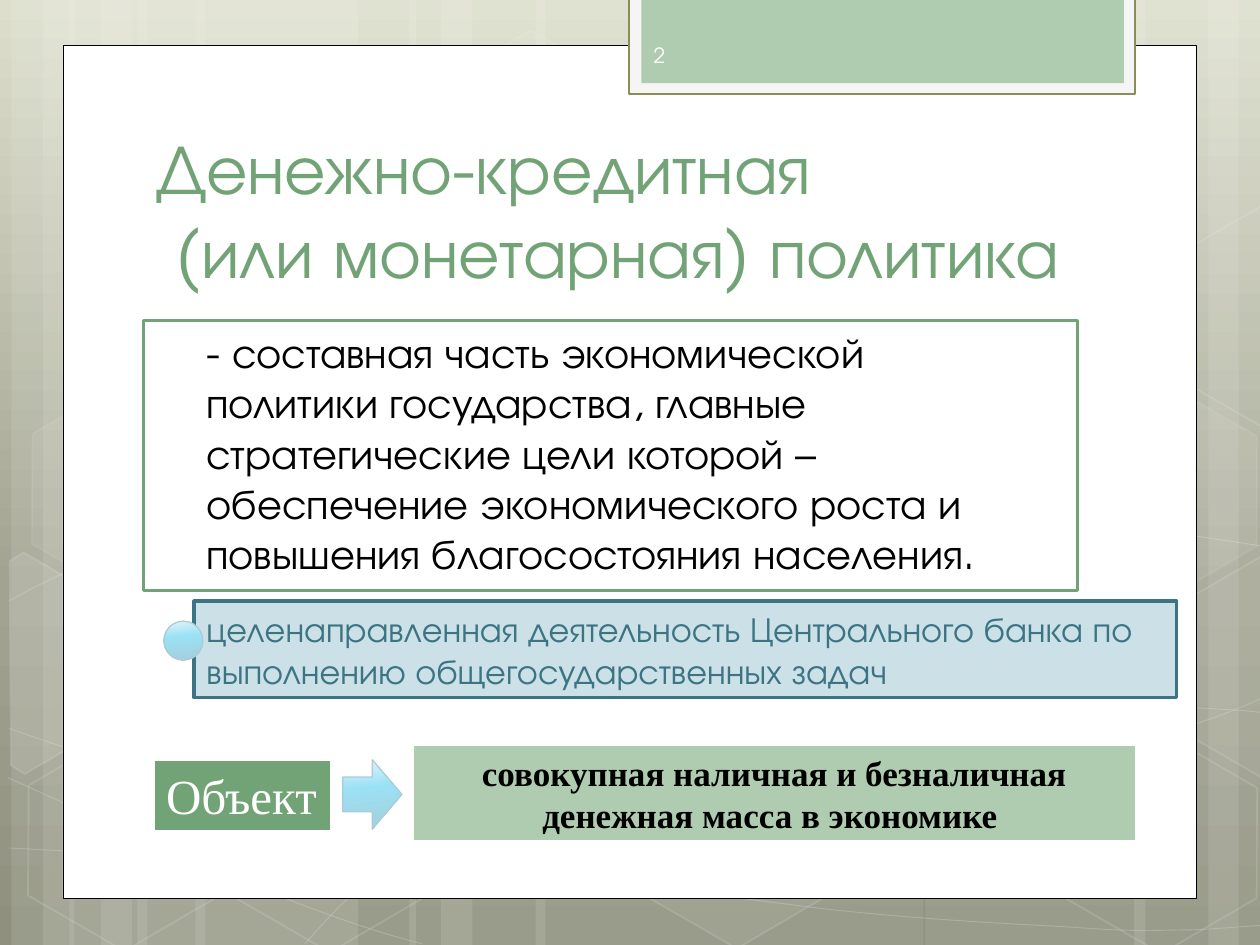
import math
from copy import deepcopy

from pptx import Presentation
from pptx import util as u
from pptx.dml.color import RGBColor
from pptx.enum import shapes, text
from pptx.oxml import ns, xmlchemy

WHITE, BLACK = RGBColor(0xFF, 0xFF, 0xFF), RGBColor(0x00, 0x00, 0x00)
NUMBER, PAPER = RGBColor(0xFE, 0xFE, 0xFE), RGBColor(0xF5, 0xF5, 0xF5)
OLIVE, SAGE = RGBColor(0x8A, 0x8E, 0x56), RGBColor(0xB0, 0xCC, 0xB0)
GREEN, TEAL = RGBColor(0x72, 0xA3, 0x76), RGBColor(0x3C, 0x74, 0x83)
PALE_BLUE, EDGE_BLUE = RGBColor(0xCB, 0xE1, 0xE7), RGBColor(0xA8, 0xCD, 0xD7)
GLOSS = [(0, RGBColor(0xE6, 0xF4, 0xF8)), (0.4, RGBColor(0x9B, 0xE1, 0xF6)), (1, RGBColor(0xA6, 0xCE, 0xD9))]
BACKDROP = [(0, RGBColor(0xDD, 0xDF, 0xCC)), (0.62, RGBColor(0xA2, 0xA3, 0x91)), (1, RGBColor(0x8F, 0x91, 0x7E))]
SANS, SERIF = "TeX Gyre Adventor", "Times New Roman"
KIND, ANCHOR, ALIGN = shapes.MSO_SHAPE, text.MSO_ANCHOR, text.PP_ALIGN

STRIPES = [(1.09, 1.75, 0), (0.09, 0.5, 0), (0.34, 0.83, 0), (1.55, 1.75, 0), (0.55, 0.5, 0), (0.8, 0.83, 0),
           (7.34, 1.75, 180), (9.59, 0.5, 180), (9, 0.83, 180), (4.25, 3.08, 0), (3.25, 0.5, 0), (3.5, 0.83, 0)]
HEXAGONS = [(3.34, 0.36, 4, 8), (4.97, 5.89, 6, 12), (0.11, 5.91, 0, 12), (0.14, 3.12, 7, 8),
            (1.74, 5.92, 0, 12), (7.53, 4.53, 10, 12), (8.34, 5.93, 0, 12), (8.34, 3.14, 7, 8)]
CUT_HEXAGONS = [
    ((0.36, 5.36), 10, [(0.08, 4.45), (0.19, 4.38), (0.96, 4.83), (0.95, 5.7), (0.2, 6.14), (0.09, 6.07)]),
    ((9.85, 5.2), 4, [(9.26, 4.85), (10.02, 4.41), (10.09, 4.46), (10.09, 6.13), (10.02, 6.17), (9.26, 5.73)]),
    ((9.85, 2.41), 0, [(9.26, 2.07), (10.02, 1.63), (10.1, 1.68), (10.09, 3.35), (10.02, 3.39), (9.26, 2.95)])]
WAVES = [
    [(0.07, 6.73), (0.61, 6.76), (1.15, 6.79), (1.9, 6.78), (2.65, 6.77), (3.58, 6.75), (4.58, 6.65),
     (5.58, 6.55), (7, 6.36), (7.92, 6.17), (8.83, 5.98), (9.77, 5.68), (10.07, 5.51)],
    [(0.07, 4.77), (0.36, 4.61), (0.65, 4.46), (1.21, 4.31), (1.78, 4.16), (2.59, 3.94), (3.47, 3.87),
     (4.36, 3.8), (5.44, 3.79), (6.54, 3.87), (7.64, 3.95), (9.47, 4.26), (10.07, 4.34)],
    [(0.06, 6.17), (1.27, 6.72), (2.47, 7.27), (3.35, 7.49)],
    [(0.07, 5.78), (0.38, 5.89), (0.7, 6), (1.28, 6.16), (1.86, 6.31), (2.73, 6.56), (3.57, 6.73),
     (4.4, 6.9), (5.45, 7.08), (6.28, 7.18), (7.11, 7.29), (8, 7.33), (8.53, 7.36), (9.06, 7.4),
     (9.19, 7.38), (9.45, 7.38), (9.71, 7.37), (9.89, 7.35), (10.07, 7.34)],
    [(2.42, 7.49), (2.6, 7.29), (2.78, 7.09), (3.02, 6.91), (3.26, 6.72), (3.6, 6.53), (3.88, 6.39),
     (4.16, 6.25), (4.33, 6.19), (4.69, 6.09), (5.06, 5.99), (5.73, 5.85), (6.08, 5.78), (6.44, 5.71),
     (6.49, 5.71), (6.8, 5.69), (7.11, 5.66), (7.6, 5.63), (7.94, 5.62), (8.29, 5.61), (8.86, 5.62),
     (8.86, 5.62), (9.08, 5.62), (9.31, 5.62), (9.53, 5.62), (9.71, 5.63), (9.88, 5.64), (9.97, 5.65),
     (10.06, 5.66), (10.03, 5.65), (10.06, 5.66)]]


def set_alpha(color_parent, percent):
    """Make the solid colour inside an element partly transparent."""
    alpha = xmlchemy.OxmlElement("a:alpha")
    alpha.set("val", str(percent * 1000))
    next(color_parent.iter(ns.qn("a:srgbClr"))).append(alpha)


def set_gradient(fill, element, stops, angle):
    """Give a fill three gradient stops, with the angle counted clockwise."""
    fill.gradient()
    fill.gradient_angle = 360 - angle
    stop_list = next(element.iter(ns.qn("a:gsLst")))
    stop_list.append(deepcopy(stop_list[0]))
    for stop, (position, color) in zip(fill.gradient_stops, stops):
        stop.position = position
        stop.color.rgb = color


def style(shape, fill=None, line=None, width=1, fill_alpha=100, line_alpha=100):
    """Set fill, outline and transparency of a shape and drop its shadow."""
    shape.shadow.inherit = False
    if fill is None or fill_alpha == 0:
        shape.fill.background()
    elif isinstance(fill, list):
        set_gradient(shape.fill, shape.element, fill, 84)
    else:
        shape.fill.solid()
        shape.fill.fore_color.rgb = fill
        if fill_alpha < 100:
            set_alpha(shape.element.spPr.find(ns.qn("a:solidFill")), fill_alpha)
    if line is None:
        shape.line.fill.background()
    else:
        shape.line.color.rgb = line
        shape.line.width = u.Pt(width)
        if line_alpha < 100:
            set_alpha(shape.element.spPr.find(ns.qn("a:ln")), line_alpha)


def add_preset(slide, kind, box, **look):
    """Add a styled preset shape in a box given in inches."""
    shape = slide.shapes.add_shape(kind, *map(u.Inches, box))
    style(shape, **look)
    return shape


def add_outline(slide, points, close, **look):
    """Add a styled freeform through points given in inches."""
    corners = [(u.Inches(x), u.Inches(y)) for x, y in points]
    builder = slide.shapes.build_freeform(*corners[0])
    builder.add_line_segments(corners[1:], close=close)
    shape = builder.convert_to_shape()
    style(shape, **look)
    return shape


def bend(shape):
    """Turn every three straight segments of a freeform into one cubic curve."""
    segments = list(shape.element.iter(ns.qn("a:lnTo")))
    for start in range(0, len(segments), 3):
        curve = xmlchemy.OxmlElement("a:cubicBezTo")
        segments[start].addprevious(curve)
        for segment in segments[start:start + 3]:
            curve.append(segment[0])
            segment.getparent().remove(segment)


def turn_back(point, center, degrees):
    """Rotate a point counter-clockwise around a center."""
    dx, dy = point[0] - center[0], point[1] - center[1]
    cos, sin = math.cos(math.radians(degrees)), math.sin(math.radians(degrees))
    return center[0] + dx * cos + dy * sin, center[1] - dx * sin + dy * cos


def write(shape, paragraphs, size, color, font=SANS, bold=False, anchor=ANCHOR.TOP,
          align=ALIGN.LEFT, wrap=True, indent=0, fit=text.MSO_AUTO_SIZE.NONE):
    """Write paragraphs, each a list of lines, into a shape."""
    frame = shape.text_frame
    frame.word_wrap, frame.vertical_anchor, frame.auto_size = wrap, anchor, fit
    for index, lines in enumerate(paragraphs):
        paragraph = frame.add_paragraph() if index else frame.paragraphs[0]
        paragraph.alignment = align
        if indent:
            paragraph._p.get_or_add_pPr().set("marL", str(u.Inches(indent)))
        for number, line in enumerate(lines):
            if number:
                paragraph.add_line_break()
            run = paragraph.add_run()
            run.text = line
            run.font.size, run.font.name, run.font.bold = u.Pt(size), font, bold
            run.font.color.rgb = color


def draw_backdrop(slide, box):
    """Draw the gradient, stripes, waves, hexagons and white sheet."""
    left, top, width, height = box
    set_gradient(slide.background.fill, slide.element, BACKDROP, 90)
    for x, stripe_width, turn in STRIPES:
        stripe = add_preset(slide, KIND.RECTANGLE, (left + x, top, stripe_width, height), fill=WHITE, fill_alpha=10)
        stripe.rotation = turn
    for wave in WAVES:
        points = [(left + x, top + y) for x, y in wave]
        bend(add_outline(slide, points, False, line=WHITE, width=0.5, line_alpha=20))
    for x, y, fill_alpha, line_alpha in HEXAGONS:
        hexagon = add_preset(slide, KIND.HEXAGON, (left + x, top + y, 1.75, 1.52), fill=WHITE,
                             fill_alpha=fill_alpha, line=WHITE, line_alpha=line_alpha)
        hexagon.adjustments[0] = 0.285
        hexagon.rotation = 30
    for center, alpha, corners in CUT_HEXAGONS:
        points = [turn_back(corner, center, 30) for corner in corners]
        cut = add_outline(slide, [(left + x, top + y) for x, y in points], True, fill=WHITE,
                          fill_alpha=alpha, line=WHITE, line_alpha=12)
        cut.rotation = 30
    add_preset(slide, KIND.RECTANGLE, (left + 0.5, top + 0.36, width - 1, height - 0.73),
               fill=WHITE, line=BLACK, width=0.5)


def draw_number_tab(slide, box):
    """Draw the hanging tab with the slide number."""
    left, top, width, height = box
    add_preset(slide, KIND.RECTANGLE, box, fill=PAPER, line=OLIVE, width=1.25)
    add_preset(slide, KIND.RECTANGLE, (left + 0.1, top, width - 0.19, height - 0.09), fill=SAGE)
    number = slide.shapes.add_textbox(*map(u.Inches, (left + 0.1, top + 0.26, 1.46, 0.4)))
    write(number, [["2"]], 12, NUMBER, anchor=ANCHOR.MIDDLE)


def draw_heading(slide, box):
    """Write the two-line heading."""
    heading = slide.shapes.add_textbox(*map(u.Inches, box))
    write(heading, [["Денежно-кредитная", " (или монетарная) политика"]], 40, GREEN, anchor=ANCHOR.BOTTOM)


def draw_definition(slide, box):
    """Draw the framed definition."""
    definition = slide.shapes.add_textbox(*map(u.Inches, box))
    style(definition, fill=WHITE, line=GREEN, width=1.75)
    write(definition, [["- составная часть экономической"], ["политики государства, главные"],
                       ["стратегические цели которой –"], ["обеспечение экономического роста и"],
                       ["повышения благосостояния населения."]], 24, BLACK, indent=0.4)


def draw_object_row(slide, box):
    """Draw the object label, its arrow and the money supply panel."""
    left, top, width, height = box
    grow = text.MSO_AUTO_SIZE.SHAPE_TO_FIT_TEXT
    supply = add_preset(slide, KIND.RECTANGLE, (left + 2.05, top, width - 2.05, height), fill=SAGE, line=WHITE, width=1.75)
    write(supply, [["совокупная наличная и безналичная денежная масса в экономике "]], 20, BLACK,
          SERIF, bold=True, anchor=ANCHOR.MIDDLE, align=ALIGN.CENTER, fit=grow)
    label = add_preset(slide, KIND.RECTANGLE, (left, top + 0.12, 1.41, 0.57), fill=GREEN, line=WHITE, width=1.75)
    write(label, [["Объект"]], 28, WHITE, SERIF, wrap=False, fit=grow)
    add_preset(slide, KIND.RIGHT_ARROW, (left + 1.5, top + 0.12, 0.47, 0.55), fill=GLOSS, line=EDGE_BLUE, width=0.75)


def draw_activity(slide, box):
    """Draw the blue statement with its glossy ball."""
    left, top = box[:2]
    activity = add_preset(slide, KIND.RECTANGLE, box, fill=PALE_BLUE, line=TEAL, width=1.75)
    write(activity, [["целенаправленная деятельность Центрального банка по выполнению общегосударственных задач"]],
          20, TEAL, fit=text.MSO_AUTO_SIZE.SHAPE_TO_FIT_TEXT)
    add_preset(slide, KIND.OVAL, (left - 0.24, top + 0.16, 0.31, 0.31), fill=GLOSS, line=EDGE_BLUE, width=0.75)


def main():
    """Build the slide and save it."""
    deck = Presentation()
    deck.slide_width, deck.slide_height = u.Inches(10), u.Inches(7.5)
    slide = deck.slides.add_slide(deck.slide_layouts[6])
    draw_backdrop(slide, (0, 0, 10, 7.5))
    draw_number_tab(slide, (4.99, -0.02, 4.02, 0.77))
    draw_heading(slide, (1.14, 1.12, 8.19, 1.25))
    draw_definition(slide, (1.14, 2.54, 7.41, 2.15))
    draw_object_row(slide, (1.22, 5.91, 7.8, 0.77))
    draw_activity(slide, (1.54, 4.77, 7.8, 0.77))
    deck.save("out.pptx")


if __name__ == "__main__":
    main()
